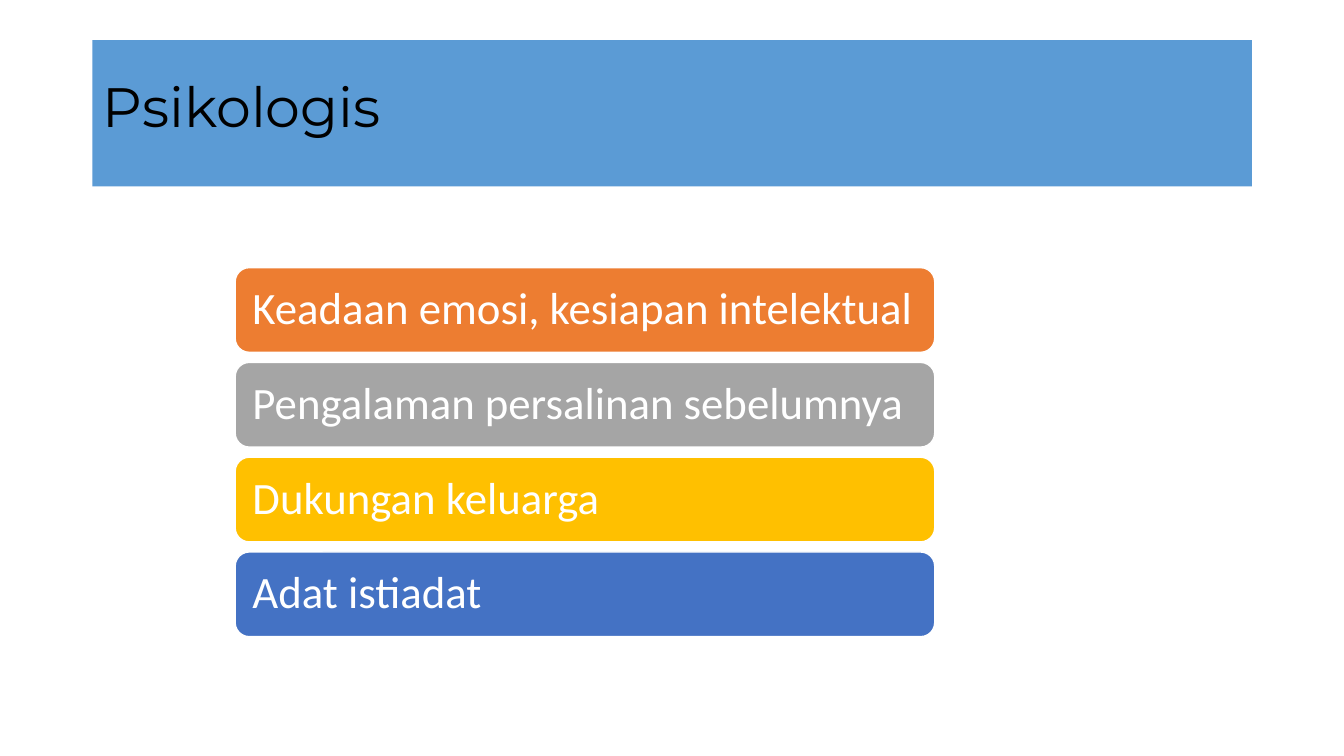
"""Build a slide listing the psychological factors as four coloured bars."""
import pptx
import pptx.util
import pptx.dml.color
import pptx.enum.shapes
import pptx.enum.text

Pt = pptx.util.Pt
SHAPES = pptx.enum.shapes.MSO_SHAPE
COLOURS = {
    "title": "5B9BD5",
    "orange": "ED7D31",
    "grey": "A5A5A5",
    "gold": "FFC000",
    "blue": "4472C4",
    "white": "FFFFFF",
    "black": "000000",
}
FACTORS = [
    ("Keadaan emosi, kesiapan intelektual", "orange"),
    ("Pengalaman persalinan sebelumnya", "grey"),
    ("Dukungan keluarga", "gold"),
    ("Adat istiadat", "blue"),
]
BAR_TOP = 191.2
BAR_STEP = 67.7


def colour(name):
    return pptx.dml.color.RGBColor.from_string(COLOURS[name])


def add_bar(page, kind, bounds, fill, text, font, size, ink, insets):
    box = page.shapes.add_shape(kind, *[Pt(value) for value in bounds])
    box.shadow.inherit = False
    box.fill.solid()
    box.fill.fore_color.rgb = colour(fill)
    box.line.fill.background()
    frame = box.text_frame
    frame.word_wrap = True
    frame.vertical_anchor = pptx.enum.text.MSO_ANCHOR.MIDDLE
    frame.margin_left, frame.margin_top, frame.margin_right, frame.margin_bottom = [
        Pt(value) for value in insets
    ]
    frame.text = text
    para = frame.paragraphs[0]
    para.alignment = pptx.enum.text.PP_ALIGN.LEFT
    para.line_spacing = 0.9
    span = para.runs[0]
    span.font.name = font
    span.font.size = Pt(size)
    span.font.color.rgb = colour(ink)
    return box


deck = pptx.Presentation()
deck.slide_width = Pt(960)
deck.slide_height = Pt(540)
page = deck.slides.add_slide(deck.slide_layouts[6])

add_bar(page, SHAPES.RECTANGLE, (66, 28.75, 828.2, 104.4), "title",
        "Psikologis", "Montserrat", 39.6, "black", (7.2, 3.6, 7.2, 9))

for index, (factor, fill) in enumerate(FACTORS):
    bounds = (168, BAR_TOP + index * BAR_STEP, 499.7, 60.5)
    bar = add_bar(page, SHAPES.ROUNDED_RECTANGLE, bounds, fill,
                  factor, "Calibri", 32, "white", (9.4, 6, 4, 6))
    bar.line.color.rgb = colour("white")
    bar.line.width = Pt(1)

deck.save("out.pptx")
